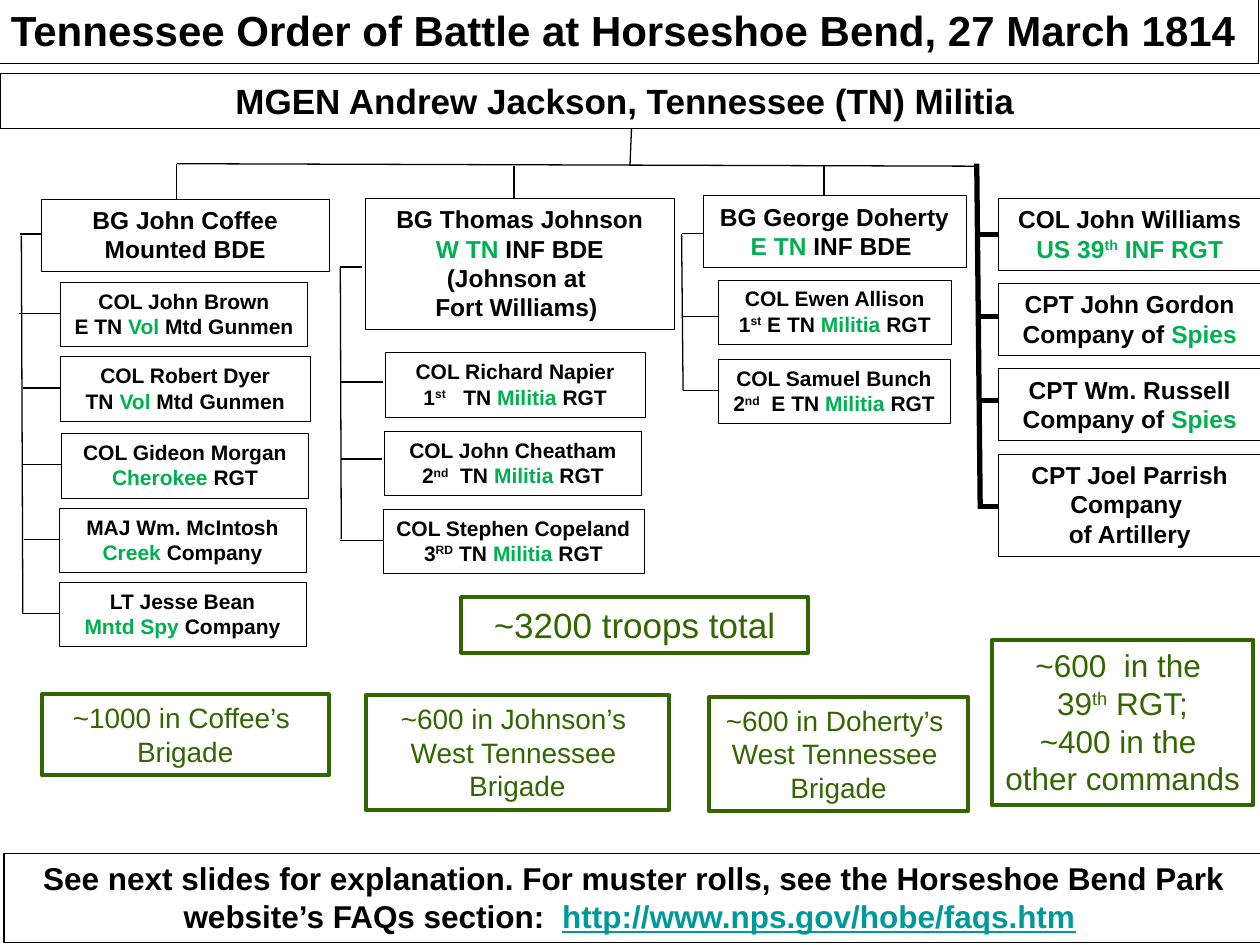
from pptx import Presentation, util as u
from pptx.dml.color import RGBColor
from pptx.enum import shapes, text
from pptx.oxml.ns import qn
from lxml import etree

BLACK, WHITE, GREEN, OLIVE, TEAL = "000000", "FFFFFF", "00B050", "336600", "009999"
CENTER, LEFT = text.PP_ALIGN.CENTER, text.PP_ALIGN.LEFT

prs = Presentation()
prs.slide_width, prs.slide_height = u.Cm(25.4), u.Cm(19.05)
s = prs.slides.add_slide(prs.slide_layouts[6])


def box(x, y, w, h, content, size, color=BLACK, line=0.25, bold=True,
        fill=None, align=CENTER, wrap=True):
    """Bordered text: * toggles green, ^ superscript, _ the web address style."""
    sp = s.shapes.add_textbox(u.Cm(x), u.Cm(y), u.Cm(w), u.Cm(h))
    sp.line.color.rgb = RGBColor.from_string(BLACK if bold else color)
    sp.line.width = u.Pt(line)
    if fill:
        sp.fill.solid()
        sp.fill.fore_color.rgb = RGBColor.from_string(fill)
    tf = sp.text_frame
    tf.word_wrap = wrap
    tf.auto_size = text.MSO_AUTO_SIZE.SHAPE_TO_FIT_TEXT
    on = {"*": False, "^": False, "_": False}
    for i, row in enumerate(content.split("\n")):
        p = tf.paragraphs[0] if i == 0 else tf.add_paragraph()
        p.alignment = align
        for mark in on:
            row = row.replace(mark, f"|{mark}|")
        for part in row.split("|"):
            if part in on:
                on[part] = not on[part]
            elif part:
                r = p.add_run()
                r.text = part
                fmt = {"name": "Arial", "size": u.Pt(size), "bold": bold,
                       "underline": on["_"]}
                for key, value in fmt.items():
                    setattr(r.font, key, value)
                c = GREEN if on["*"] else TEAL if on["_"] else color
                r.font.color.rgb = RGBColor.from_string(c)
                if on["^"]:
                    r.font._element.set("baseline", "30000")


def line(x1, y1, x2, y2, width=0.75):
    cn = s.shapes.add_connector(shapes.MSO_CONNECTOR.STRAIGHT,
                                u.Cm(x1), u.Cm(y1), u.Cm(x2), u.Cm(y2))
    cn.line.color.rgb = RGBColor.from_string(BLACK)
    cn.line.width = u.Pt(width)
    etree.SubElement(cn._element.spPr, qn("a:effectLst"))


# Title, commander and footer
box(-0.03, -0.03, 25.4, 1.3, "Tennessee Order of Battle at Horseshoe Bend, 27 March 1814",
    24, fill=WHITE, align=LEFT)
box(0, 1.47, 25.4, 1.12, "MGEN Andrew Jackson, Tennessee (TN) Militia ", 20)
box(0.08, 17.2, 25.4, 1.8,
    "See next slides for explanation. For muster rolls, see the Horseshoe Bend Park "
    "website’s FAQs section:  _http://www.nps.gov/hobe/faqs.htm_ ", 18, line=0.75)

# Brigades
for x, y, w, h, content in [
    (0.84, 4.01, 5.79, 1.45, "BG John Coffee\nMounted BDE"),
    (7.37, 3.99, 6.22, 2.64,
     "BG Thomas Johnson\n*W TN *INF BDE\n(Johnson at \nFort Williams) "),
    (14.17, 3.94, 5.31, 1.45, "BG George Doherty\n*E TN *INF BDE "),
]:
    box(x, y, w, h, content, 14)

# Commands directly under Jackson
for i, (h, content) in enumerate([
    (1.45, "COL John Williams\n*US 39^th^ INF RGT*"),
    (1.45, "CPT John Gordon\nCompany of *Spies*"),
    (1.45, "CPT Wm. Russell\nCompany of *Spies*"),
    (2.06, "CPT Joel Parrish\nCompany \nof Artillery"),
]):
    box(20.12, 3.99 + 1.72 * i, 5.31, h, content, 14)

# Regiments and companies
for x, y, w, content in [
    (1.22, 5.69, 4.98, "COL John Brown\nE TN *Vol *Mtd Gunmen"),
    (1.22, 7.19, 5.03, "COL Robert Dyer\nTN *Vol* Mtd Gunmen"),
    (1.24, 8.74, 4.98, "COL Gideon Morgan\n*Cherokee *RGT"),
    (1.19, 10.24, 4.98, "MAJ Wm. McIntosh\n*Creek* Company"),
    (1.19, 11.73, 4.98, "LT Jesse Bean\n*Mntd Spy* Company"),
    (7.77, 7.11, 5.23, "COL Richard Napier\n1^st^   TN *Militia* RGT"),
    (7.75, 8.69, 5.18, "COL John Cheatham\n2^nd^  TN *Militia* RGT"),
    (7.72, 10.26, 5.26, "COL Stephen Copeland\n3^RD^ TN *Militia* RGT"),
    (14.48, 5.64, 4.7, "COL Ewen Allison\n1^st^ E TN *Militia *RGT"),
    (14.48, 7.24, 4.67, "COL Samuel Bunch\n2^nd^  E TN *Militia *RGT"),
]:
    box(x, y, w, 1.3, content, 12)

# Troop counts
for x, y, w, h, size, wrap, content in [
    (9.3, 12.04, 6.99, 1.12, 20, True, "~3200 troops total"),
    (0.84, 14, 5.79, 1.63, 16, True, "~1000 in Coffee’s \nBrigade"),
    (7.37, 14.02, 6.12, 2.31, 16, True, "~600 in Johnson’s \nWest Tennessee \nBrigade"),
    (14.3, 14.05, 5.21, 2.31, 16, True, "~600 in Doherty’s \nWest Tennessee \nBrigade"),
    (19.99, 12.9, 5.28, 3.33, 18, False,
     "~600  in the \n39^th^ RGT;\n~400 in the \nother commands"),
]:
    box(x, y, w, h, content, size, OLIVE, 2.25, False, WHITE, wrap=wrap)

# Lines from Jackson down to the brigades
line(12.73, 2.59, 12.7, 3.33)
line(19.69, 3.35, 3.56, 3.3)
for x, top, bottom in [(3.56, 3.3, 4.01), (10.36, 3.35, 3.99), (16.61, 3.33, 3.94)]:
    line(x, top, x, bottom)

# Each trunk with its branches (left, right, height)
for trunk, width, branches in [
    ((0.43, 4.75, 0.46, 12.37), 0.75,
     [(0.41, 0.84, 4.72), (0.38, 1.22, 6.32), (0.46, 1.22, 7.82),
      (0.46, 1.24, 9.37), (0.48, 1.19, 10.87), (0.46, 1.19, 12.37)]),
    ((6.86, 5.38, 6.88, 10.87), 0.75,
     [(6.86, 7.29, 5.38), (6.88, 7.72, 7.7), (6.88, 7.7, 9.25), (6.86, 7.72, 10.9)]),
    ((13.74, 4.72, 13.77, 7.87), 0.75,
     [(13.74, 14.17, 4.7), (13.74, 14.48, 6.38), (13.77, 14.48, 7.87)]),
    ((19.69, 3.3, 19.76, 10.26), 3,
     [(19.69, 20.12, 4.72), (19.69, 20.12, 6.38), (19.69, 20.12, 8.08),
      (19.76, 20.12, 10.21)]),
]:
    line(*trunk, width)
    for left, right, y in branches:
        line(left, y, right, y, width)

prs.save("out.pptx")
